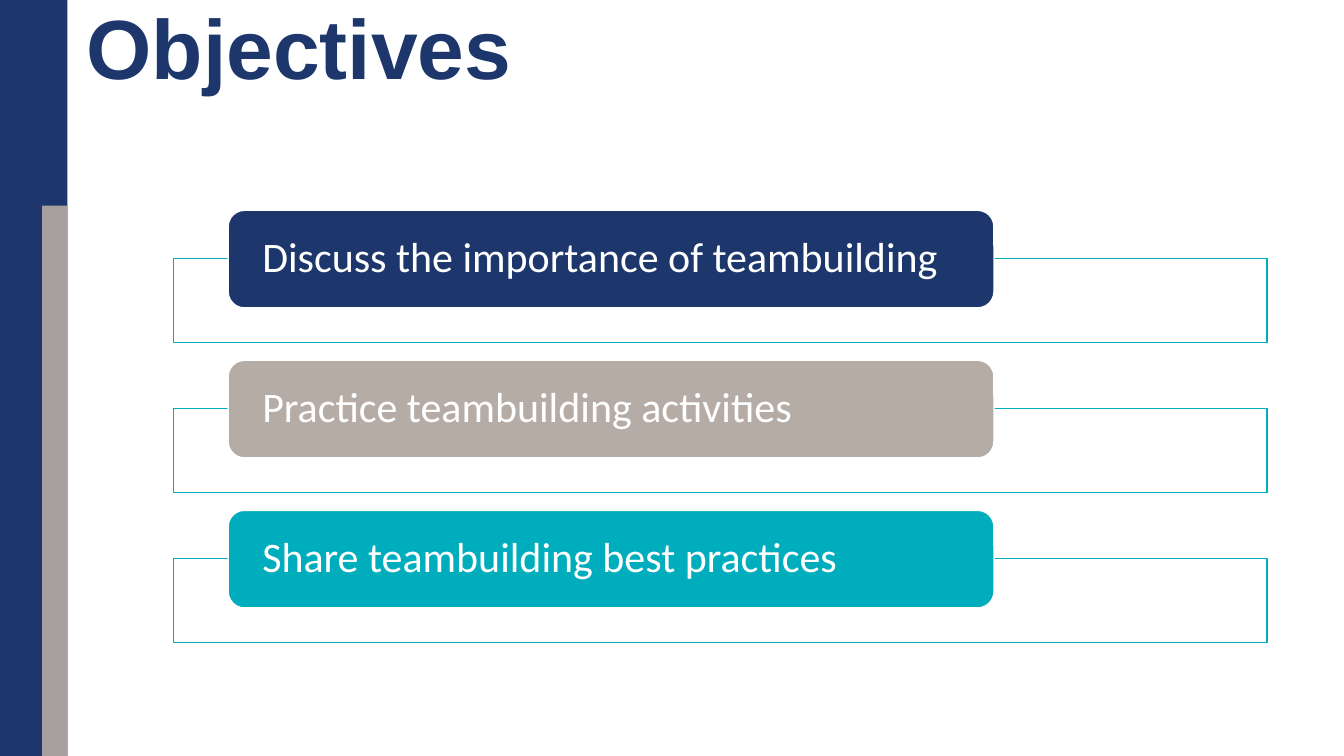
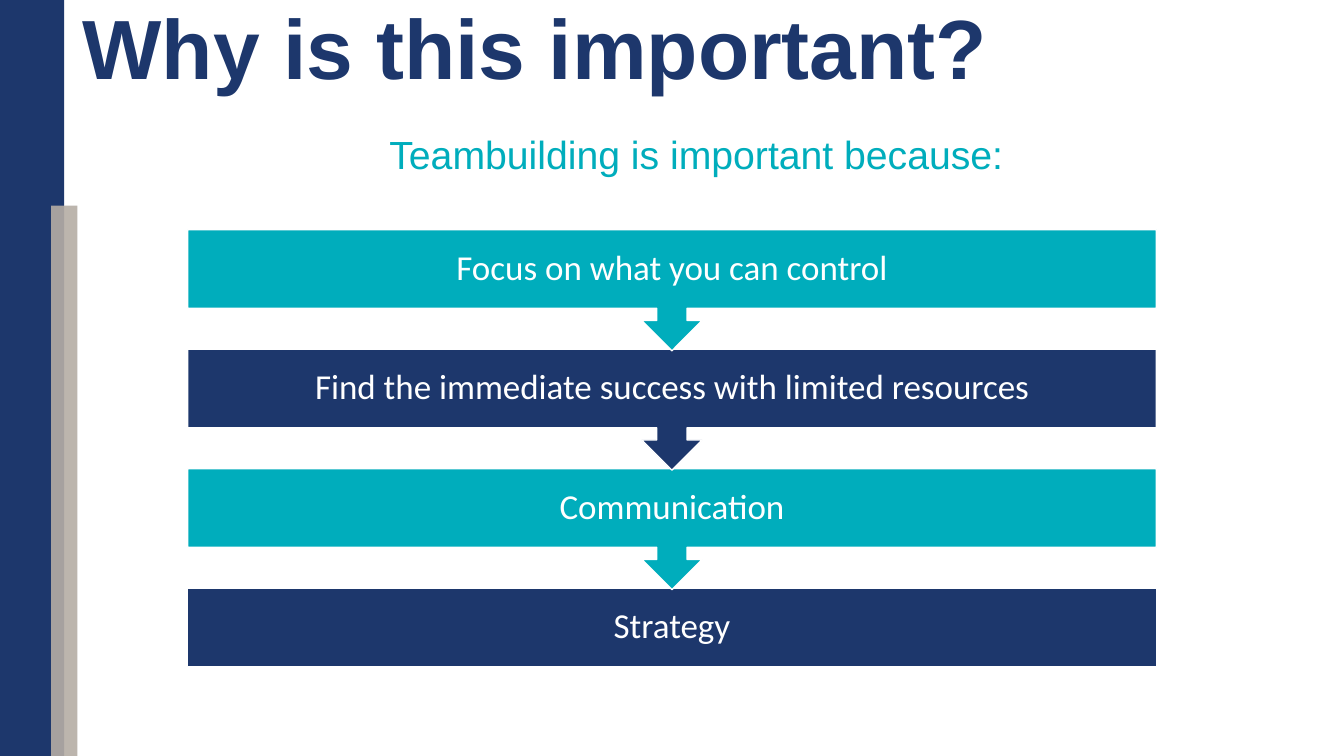
from lxml.etree import SubElement
from pptx import Presentation
from pptx.dml.color import RGBColor
from pptx.enum.shapes import MSO_SHAPE
from pptx.enum.text import MSO_ANCHOR, MSO_AUTO_SIZE, PP_ALIGN
from pptx.oxml.ns import qn
from pptx.util import Cm, Pt

COLORS = {
    "navy": "1D376C",
    "teal": "00ADBC",
    "taupe": "B5ADA5",
    "white": "FFFFFF",
}
SLIDE_WIDTH, SLIDE_HEIGHT = 33.87, 19.05
TITLE_ONLY = 5

OBJECTIVES = [
    ("Discuss the importance of teambuilding", "navy"),
    ("Practice teambuilding activities", "taupe"),
    ("Share teambuilding best practices", "teal"),
]
REASONS_INTRO = "Teambuilding is important because:"
REASONS = [
    ("Focus on what you can control", "teal"),
    ("Find the immediate success with limited resources", "navy"),
    ("Communication", "teal"),
    ("Strategy", "navy"),
]


def rgb(name):
    return RGBColor.from_string(COLORS[name])


def set_text(shape, text, font, size, color, align=PP_ALIGN.LEFT,
             anchor=MSO_ANCHOR.TOP, spacing=None, bold=False, inset=None):
    frame = shape.text_frame
    frame.text = text
    frame.word_wrap = True
    frame.auto_size = MSO_AUTO_SIZE.NONE
    frame.vertical_anchor = anchor
    if inset:
        frame.margin_left = frame.margin_right = Cm(inset[0])
        frame.margin_top = frame.margin_bottom = Cm(inset[1])
    paragraph = frame.paragraphs[0]
    paragraph.alignment = align
    paragraph.line_spacing = spacing
    paragraph.font.name = font
    paragraph.font.size = Pt(size)
    paragraph.font.bold = bold
    paragraph.font.color.rgb = rgb(color)


def add_box(slide, kind, left, top, width, height, fill, line=None, opacity=100):
    shape = slide.shapes.add_shape(kind, Cm(left), Cm(top), Cm(width), Cm(height))
    shape.shadow.inherit = False
    shape.fill.solid()
    shape.fill.fore_color.rgb = rgb(fill)
    if opacity < 100:
        color = shape.fill._xPr.find(qn("a:solidFill"))[0]
        SubElement(color, qn("a:alpha")).set("val", str(opacity * 1000))
    if line:
        shape.line.color.rgb = rgb(line)
        shape.line.width = Pt(1)
    else:
        shape.line.fill.background()
    return shape


def add_titled_slide(presentation, title, title_left, band_width, accent_left):
    slide = presentation.slides.add_slide(presentation.slide_layouts[TITLE_ONLY])
    shape = slide.shapes.title
    shape.left, shape.top = Cm(title_left), Cm(0)
    shape.width, shape.height = Cm(30), Cm(2.57)
    set_text(shape, title, "Arial", 60, "navy", spacing=Pt(65), bold=True)
    add_box(slide, MSO_SHAPE.RECTANGLE, 0, 0, band_width, SLIDE_HEIGHT, "navy")
    accent_top = 5.18
    add_box(slide, MSO_SHAPE.RECTANGLE, accent_left, accent_top, 0.66,
            SLIDE_HEIGHT - accent_top, "taupe", opacity=90)
    return slide


def build_objectives(presentation):
    slide = add_titled_slide(presentation, "Objectives", 1.93, 1.7, 1.06)
    first_top, pitch = 5.3, 3.78
    for index, (text, color) in enumerate(OBJECTIVES):
        top = first_top + index * pitch
        add_box(slide, MSO_SHAPE.RECTANGLE, 4.37, top + 1.22, 27.56, 2.11,
                "white", line="teal")
        card = add_box(slide, MSO_SHAPE.ROUNDED_RECTANGLE, 5.75, top, 19.3, 2.46,
                       color, line="white")
        set_text(card, text, "Calibri", 30, "white", anchor=MSO_ANCHOR.MIDDLE,
                 spacing=0.9, inset=(0.74, 0))


def build_reasons(presentation):
    slide = add_titled_slide(presentation, "Why is this important?", 1.83, 1.62, 1.29)
    intro = slide.shapes.add_textbox(Cm(8.53), Cm(3.15), Cm(18.03), Cm(1.45))
    set_text(intro, REASONS_INTRO, "Arial", 28, "teal", align=PP_ALIGN.CENTER)
    first_top, pitch = 5.79, 3.01
    last = len(REASONS) - 1
    for index, (text, color) in reversed(list(enumerate(REASONS))):
        if index == last:
            kind, height = MSO_SHAPE.RECTANGLE, 1.98
        else:
            kind, height = MSO_SHAPE.DOWN_ARROW_CALLOUT, 3.05
        step = add_box(slide, kind, 4.73, first_top + index * pitch, 24.41, height,
                       color, line="white")
        set_text(step, text, "Calibri", 25, "white", align=PP_ALIGN.CENTER,
                 anchor=MSO_ANCHOR.MIDDLE, spacing=0.9, inset=(0.48, 0.48))


def main():
    presentation = Presentation()
    presentation.slide_width = Cm(SLIDE_WIDTH)
    presentation.slide_height = Cm(SLIDE_HEIGHT)
    build_objectives(presentation)
    build_reasons(presentation)
    presentation.save("out.pptx")


if __name__ == "__main__":
    main()
